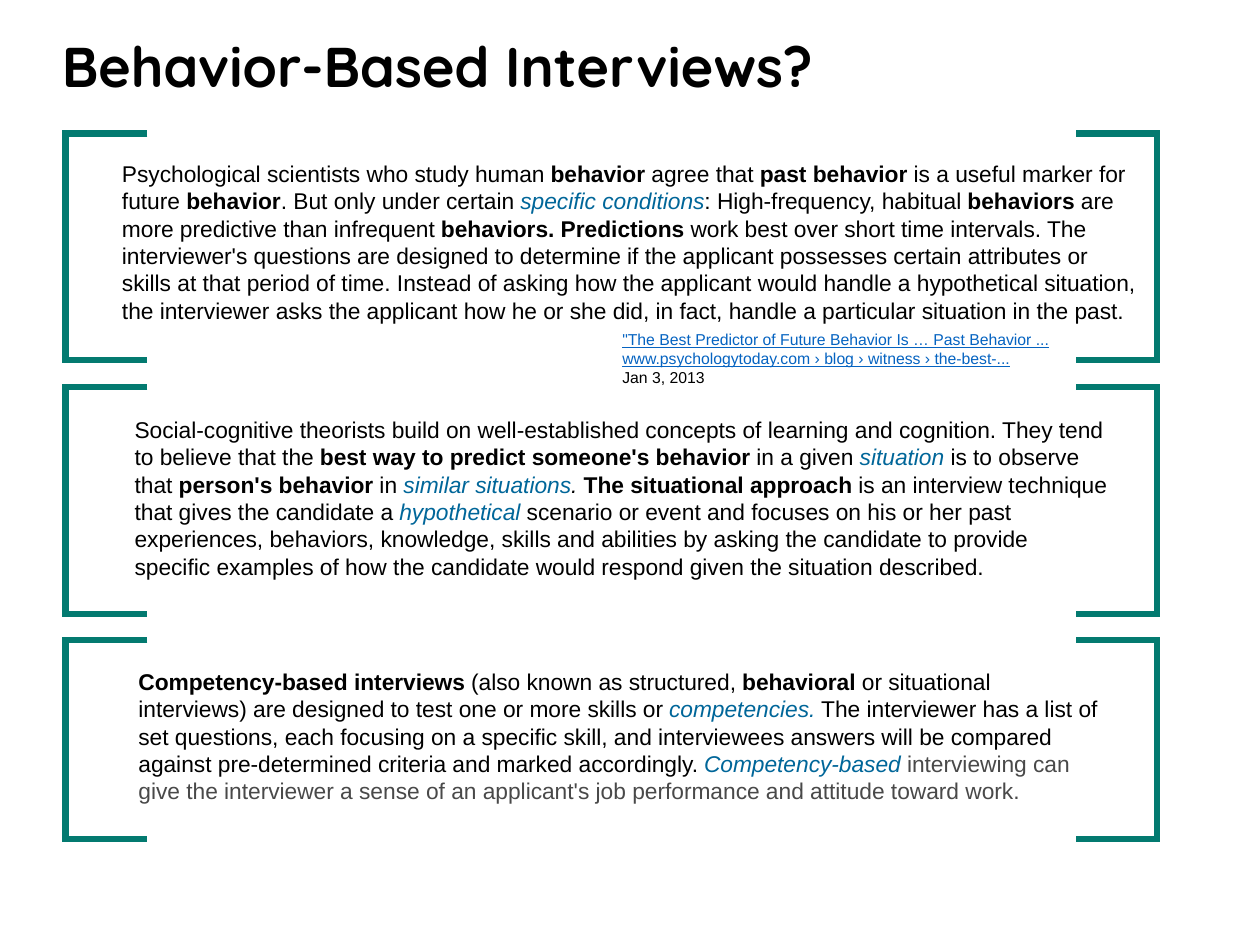
from lxml import etree
from pptx import Presentation
from pptx.dml.color import RGBColor
from pptx.enum.text import MSO_ANCHOR, MSO_AUTO_SIZE, PP_ALIGN
from pptx.oxml.ns import qn
from pptx.util import Inches, Pt

BLACK, BLUE, GRAY, LINK, GREEN = "000000", "006699", "494949", "0563C1", "037A70"
# Run styles: colour, bold, italic, underline
PLAIN = (BLACK, False, False, False)
BOLD = (BLACK, True, False, False)
TERM = (BLUE, False, True, False)
ITALIC = (BLACK, False, True, False)
MUTED = (GRAY, False, False, False)
LINKED = (LINK, False, False, True)


def add_run(p, text, style, size, font="Arial"):
    r = p.add_run()
    r.text = text
    color, r.font.bold, r.font.italic, r.font.underline = style
    r.font.color.rgb = RGBColor.from_string(color)
    r.font.size = Pt(size)
    r.font.name = font


def add_text(box, paragraphs, size):
    tf = s.shapes.add_textbox(*[Inches(v) for v in box]).text_frame
    tf.word_wrap = True
    for i, runs in enumerate(paragraphs):
        p = tf.paragraphs[0] if i == 0 else tf.add_paragraph()
        for text, style in runs:
            add_run(p, text, style, size)


prs = Presentation()
prs.slide_width, prs.slide_height = Inches(10), Inches(7.5)
s = prs.slides.add_slide(prs.slide_layouts[5])

# Title
title = s.shapes.title
title.left, title.top = Inches(0.39), Inches(0.19)
title.width, title.height = Inches(8.79), Inches(0.66)
tf = title.text_frame
tf.auto_size = MSO_AUTO_SIZE.NONE
tf.vertical_anchor = MSO_ANCHOR.MIDDLE
p = tf.paragraphs[0]
p.alignment = PP_ALIGN.LEFT
pPr = p._p.get_or_add_pPr()
pPr.set("marL", str(Inches(0.08)))
pPr.set("indent", str(-Inches(0.08)))
add_run(p, "Behavior-Based Interviews?", BOLD, 32, "Quicksand")

# A pair of square brackets around each passage
for top, height in [(1.06, 1.8), (3.07, 1.8), (5.08, 1.58)]:
    for tip, spine in [(1.17, 0.52), (8.54, 9.18)]:
        corners = [(spine, top), (spine, top + height), (tip, top + height)]
        builder = s.shapes.build_freeform(Inches(tip), Inches(top))
        builder.add_line_segments([(Inches(x), Inches(y)) for x, y in corners], close=False)
        bracket = builder.convert_to_shape()
        bracket.shadow.inherit = False
        bracket.fill.background()
        bracket.line.color.rgb = RGBColor.from_string(GREEN)
        bracket.line.width = Pt(3.5)
        etree.SubElement(bracket.line._ln, qn("a:miter"), lim="800000")

# Passages
behavior = [
    ("Psychological scientists who study human ", PLAIN),
    ("behavior", BOLD),
    (" agree that ", PLAIN),
    ("past behavior", BOLD),
    (" is a useful marker for future ", PLAIN),
    ("behavior", BOLD),
    (". But only under certain ", PLAIN),
    ("specific conditions", TERM),
    (": High-frequency, habitual ", PLAIN),
    ("behaviors", BOLD),
    (" are more predictive than infrequent ", PLAIN),
    ("behaviors. Predictions", BOLD),
    (" work best over short time intervals. The interviewer's questions are designed to "
     "determine if the applicant possesses certain attributes or skills at that period of "
     "time. Instead of asking how the applicant would handle a hypothetical situation, the "
     "interviewer asks the applicant how he or she did, in fact, handle a particular "
     "situation in the past.", PLAIN),
]
situational = [
    ("Social-cognitive theorists build on well-established concepts of learning and "
     "cognition. They tend to believe that the ", PLAIN),
    ("best way to predict someone's behavior", BOLD),
    (" in a given ", PLAIN),
    ("situation", TERM),
    (" is to observe that ", PLAIN),
    ("person's behavior", BOLD),
    (" in ", PLAIN),
    ("similar situations", TERM),
    (". ", ITALIC),
    ("The situational approach ", BOLD),
    ("is an interview technique that gives the candidate a ", PLAIN),
    ("hypothetical ", TERM),
    ("scenario or event and focuses on his or her past experiences, behaviors, knowledge, "
     "skills and abilities by asking the candidate to provide specific examples of how the "
     "candidate would respond given the situation described.", PLAIN),
]
competency = [
    ("Competency-based interviews ", BOLD),
    ("(also known as structured, ", PLAIN),
    ("behavioral", BOLD),
    (" or situational interviews) are designed to test one or more skills or ", PLAIN),
    ("competencies.", TERM),
    (" The interviewer has a list of set questions, each focusing on a specific skill, and "
     "interviewees answers will be compared against pre-determined criteria and marked "
     "accordingly. ", PLAIN),
    ("Competency-based", TERM),
    (" interviewing can give the interviewer a sense of an applicant's job performance and "
     "attitude toward work.", MUTED),
]
citation = [
    [("\"The Best Predictor of Future Behavior Is … Past Behavior ...", LINKED)],
    [("www.psychologytoday.com › blog › witness › the-best-...", LINKED)],
    [("Jan 3, 2013", PLAIN)],
]
add_text((0.87, 1.22, 8.26, 1.87), [behavior], 13)
add_text((4.84, 2.57, 4.11, 0.56), citation, 9)
add_text((0.97, 3.25, 7.93, 1.41), [situational], 13)
add_text((1, 5.25, 7.85, 1.46), [competency], 13)

prs.save("out.pptx")
